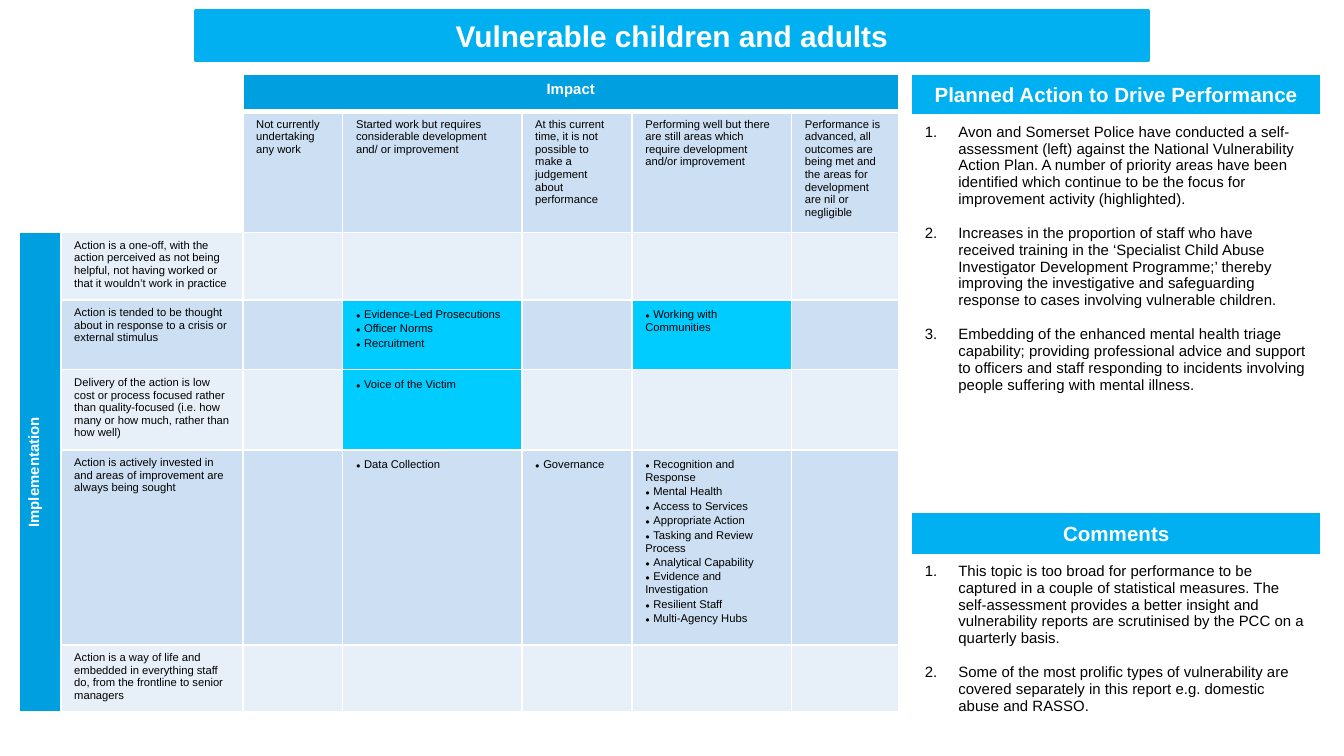
"""Build the self-assessment slide on vulnerable children and adults."""
from lxml import etree
from pptx import Presentation
from pptx import util as u
from pptx.dml.color import RGBColor
from pptx.enum import shapes, text
from pptx.oxml.ns import qn

COLORS = {"banner": "00B0F0", "axis": "009FDF", "dark": "CCDFF3", "light": "E7F0F9",
          "focus": "00CCFF", "white": "FFFFFF", "black": "000000"}
FONT = "Arial"
TITLE = "Vulnerable children and adults"
IMPACTS = [
    "Not currently undertaking any work",
    "Started work but requires considerable development and/ or improvement",
    "At this current time, it is not possible to make a judgement about performance",
    "Performing well but there are still areas which require development and/or improvement",
    "Performance is advanced, all outcomes are being met and the areas for development "
    "are nil or negligible",
]
IMPLEMENTATIONS = [
    "Action is a one-off, with the action perceived as not being helpful, not having worked "
    "or that it wouldn’t work in practice",
    "Action is tended to be thought about in response to a crisis or external stimulus",
    "Delivery of the action is low cost or process focused rather than quality-focused "
    "(i.e. how many or how much, rather than how well)",
    "Action is actively invested in and areas of improvement are always being sought",
    "Action is a way of life and embedded in everything staff do, from the frontline "
    "to senior managers",
]
THEMES = {
    (1, 1): ["Evidence-Led Prosecutions", "Officer Norms", "Recruitment"],
    (1, 3): ["Working with Communities"],
    (2, 1): ["Voice of the Victim"],
    (3, 1): ["Data Collection"],
    (3, 2): ["Governance"],
    (3, 3): ["Recognition and Response", "Mental Health", "Access to Services",
             "Appropriate Action", "Tasking and Review Process", "Analytical Capability",
             "Evidence and Investigation", "Resilient Staff", "Multi-Agency Hubs"],
}
PRIORITIES = {(1, 1), (1, 3), (2, 1)}
PANELS = [
    ("Planned Action to Drive Performance", 39.6, (23, 212), [
        "Avon and Somerset Police have conducted a self-assessment (left) against the National "
        "Vulnerability Action Plan. A number of priority areas have been identified which "
        "continue to be the focus for improvement activity (highlighted).",
        "Increases in the proportion of staff who have received training in the ‘Specialist "
        "Child Abuse Investigator Development Programme;’ thereby improving the investigative "
        "and safeguarding response to cases involving vulnerable children.",
        "Embedding of the enhanced mental health triage capability; providing professional "
        "advice and support to officers and staff responding to incidents involving people "
        "suffering with mental illness.",
    ]),
    ("Comments", 274.4, (23.5, 103), [
        "This topic is too broad for performance to be captured in a couple of statistical "
        "measures. The self-assessment provides a better insight and vulnerability reports "
        "are scrutinised by the PCC on a quarterly basis.",
        "Some of the most prolific types of vulnerability are covered separately in this "
        "report e.g. domestic abuse and RASSO.",
    ]),
]
MATRIX_COLUMNS = (22.5, 97.5, 53.5, 96, 59, 85.5, 57.5)
MATRIX_ROWS = (20, 65, 36, 37.5, 43, 104.5, 36)
HEADING = {"color": "white", "bold": True, "alignment": text.PP_ALIGN.CENTER}


def add_span(para, words, size, color="black", bold=False):
    span = para.add_run()
    span.text = words
    for name, value in {"name": FONT, "size": u.Pt(size), "bold": bold}.items():
        setattr(span.font, name, value)
    span.font.color.rgb = RGBColor.from_string(COLORS[color])


def write(frame, words, size, alignment=None, **style):
    para = frame.paragraphs[0]
    if alignment is not None:
        para.alignment = alignment
    add_span(para, words, size, **style)


def write_items(frame, items, add_item):
    for index, item in enumerate(items):
        para = frame.add_paragraph() if index else frame.paragraphs[0]
        add_item(para, item, index)


def add_theme(para, theme, index):
    for words, size in (("●", 4), (" ", 7), (theme, 6)):
        add_span(para, words, size)


def add_numbered(para, item, index):
    if index:
        para.space_before = u.Pt(9.2)
    properties = para._p.get_or_add_pPr()
    properties.set("marL", str(u.Pt(18)))
    properties.set("indent", str(-u.Pt(18)))
    etree.SubElement(properties, qn("a:buFont"), typeface="+mj-lt")
    etree.SubElement(properties, qn("a:buAutoNum"), type="arabicPeriod")
    add_span(para, item, 8)


def add_border(cell, side, width):
    line = etree.SubElement(cell._tc.get_or_add_tcPr(), qn(f"a:ln{side}"), w=str(u.Pt(width)))
    fill = etree.SubElement(line, qn("a:solidFill"))
    etree.SubElement(fill, qn("a:srgbClr"), val=COLORS["white"])


def paint(cell, color):
    cell.fill.solid()
    cell.fill.fore_color.rgb = RGBColor.from_string(COLORS[color])


def add_grid(page, left, top, widths, heights):
    frame = page.shapes.add_table(len(heights), len(widths), u.Pt(left), u.Pt(top),
                                  u.Pt(sum(widths)), u.Pt(sum(heights)))
    table = frame.table
    table.first_row = table.horz_banding = False
    for column, width in zip(table.columns, widths):
        column.width = u.Pt(width)
    for number, (row, height) in enumerate(zip(table.rows, heights)):
        row.height = u.Pt(height)
        for cell in row.cells:
            for side in "LRTB":
                heavy = (number, side) in ((0, "B"), (1, "T"))
                add_border(cell, side, 3 if heavy else 1)
            cell.fill.background()
    return table


def add_title(page):
    box = page.shapes.add_shape(shapes.MSO_SHAPE.RECTANGLE, u.Pt(105), u.Pt(5.8),
                                u.Pt(510), u.Pt(26.6))
    box.shadow.inherit = False
    for part in (box.fill, box.line.fill):
        part.solid()
        part.fore_color.rgb = RGBColor.from_string(COLORS["banner"])
    box.line.width = u.Pt(2)
    frame = box.text_frame
    for side in ("left", "top", "right", "bottom"):
        setattr(frame, f"margin_{side}", 0)
    frame.vertical_anchor = text.MSO_ANCHOR.MIDDLE
    write(frame, TITLE, 16, **HEADING)


def add_panel(page, heading, top, heights, items):
    table = add_grid(page, 488.2, top, (219.6,), heights)
    header, body = table.cell(0, 0), table.cell(1, 0)
    paint(header, "banner")
    header.vertical_anchor = text.MSO_ANCHOR.MIDDLE
    write(header.text_frame, heading, 11, **HEADING)
    write_items(body.text_frame, items, add_numbered)


def add_matrix(page):
    table = add_grid(page, 10.1, 39.6, MATRIX_COLUMNS, MATRIX_ROWS)
    impact, implementation = table.cell(0, 2), table.cell(2, 0)
    impact.merge(table.cell(0, 6))
    implementation.merge(table.cell(6, 0))
    implementation._tc.get_or_add_tcPr().set("vert", "vert270")
    for cell, words in ((impact, "Impact"), (implementation, "Implementation")):
        paint(cell, "axis")
        write(cell.text_frame, words, 8, **HEADING)
    for column, words in enumerate(IMPACTS, 2):
        paint(table.cell(1, column), "dark")
        write(table.cell(1, column).text_frame, words, 6)
    for level, words in enumerate(IMPLEMENTATIONS):
        band = "dark" if level % 2 else "light"
        label = table.cell(level + 2, 1)
        paint(label, band)
        write(label.text_frame, words, 6)
        for rating in range(len(IMPACTS)):
            cell = table.cell(level + 2, rating + 2)
            paint(cell, "focus" if (level, rating) in PRIORITIES else band)
            write_items(cell.text_frame, THEMES.get((level, rating), []), add_theme)
    for cell in table.iter_cells():
        para = cell.text_frame.paragraphs[0]
        if not para.runs:
            etree.SubElement(para._p, qn("a:endParaRPr"), sz="600")


def main():
    deck = Presentation()
    deck.slide_width, deck.slide_height = u.Pt(720), u.Pt(405)
    page = deck.slides.add_slide(deck.slide_layouts[6])
    add_title(page)
    for panel in PANELS:
        add_panel(page, *panel)
    add_matrix(page)
    deck.save("out.pptx")


if __name__ == "__main__":
    main()
